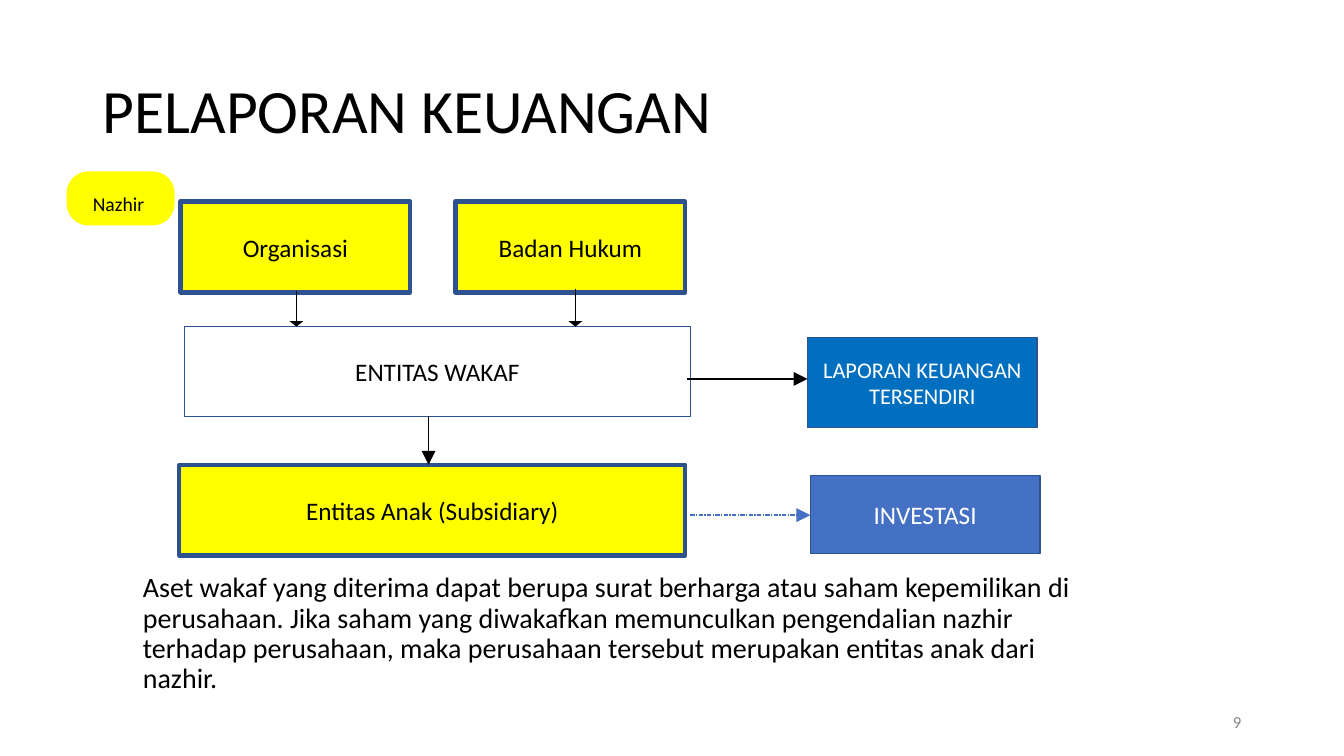
from pptx import Presentation
from pptx.dml.color import RGBColor
from pptx.enum.dml import MSO_LINE
from pptx.enum.shapes import MSO_CONNECTOR, MSO_SHAPE
from pptx.enum.text import MSO_ANCHOR, MSO_AUTO_SIZE, PP_ALIGN
from pptx.oxml.xmlchemy import OxmlElement
from pptx.util import Cm, Pt

BLACK, WHITE, YELLOW, NAVY, BLUE = "000000", "FFFFFF", "FFFF00", "2E528F", "4471C4"


def color(target, value):
    target.rgb = RGBColor.from_string(value)


def write(shape, text, size, value, align=PP_ALIGN.CENTER, anchor=MSO_ANCHOR.MIDDLE, inset=0):
    frame = shape.text_frame
    frame.text = text
    frame.word_wrap = True
    frame.auto_size = MSO_AUTO_SIZE.NONE
    frame.vertical_anchor = anchor
    frame.margin_left = frame.margin_right = Cm(inset)
    frame.margin_top = frame.margin_bottom = Cm(inset / 2)
    para = frame.paragraphs[0]
    para.alignment = align
    para.space_before = Pt(0)
    font = para.runs[0].font
    font.name = "Calibri"
    font.size = Pt(size)
    color(font.color, value)
    return para


deck = Presentation()
deck.slide_width, deck.slide_height = Cm(33.87), Cm(19.05)
page = deck.slides.add_slide(deck.slide_layouts[1])

title, body = page.placeholders
title.left, title.top, title.width, title.height = Cm(2.34), Cm(1.02), Cm(29.21), Cm(3.68)
para = write(title, "PELAPORAN KEUANGAN", 44, BLACK, PP_ALIGN.LEFT, inset=0.25)
para.line_spacing = 0.9

body.left, body.top, body.width, body.height = Cm(2.08), Cm(14.33), Cm(25.3), Cm(3.45)
explanation = (
    "Aset wakaf yang diterima dapat berupa surat berharga atau saham kepemilikan di "
    "perusahaan. Jika saham yang diwakafkan memunculkan pengendalian nazhir terhadap "
    "perusahaan, maka perusahaan tersebut merupakan entitas anak dari nazhir."
)
para = write(body, explanation, 20, BLACK, PP_ALIGN.LEFT, MSO_ANCHOR.TOP, 0.25)
para.line_spacing = 0.9
properties = para._p.get_or_add_pPr()
properties.set("marL", str(Cm(1.27)))
properties.set("indent", "0")
properties.append(OxmlElement("a:buNone"))

boxes = [
    ("Organisasi", 4.55, 5.08, 5.79, 2.29, YELLOW, 3, 18, BLACK),
    ("Badan Hukum", 11.48, 5.08, 5.79, 2.29, YELLOW, 3, 18, BLACK),
    ("ENTITAS WAKAF", 4.65, 8.23, 12.75, 2.26, None, 1, 18, BLACK),
    ("Entitas Anak (Subsidiary)", 4.52, 11.71, 12.75, 2.29, YELLOW, 3, 18, BLACK),
    ("LAPORAN KEUANGAN TERSENDIRI", 20.35, 8.51, 5.79, 2.26, "006FC0", 1, 16, WHITE),
    ("INVESTASI", 20.42, 11.99, 5.79, 1.96, BLUE, 1, 18, WHITE),
]
for text, left, top, width, height, fill, border, size, ink in boxes:
    box = page.shapes.add_shape(MSO_SHAPE.RECTANGLE, Cm(left), Cm(top), Cm(width), Cm(height))
    box.shadow.inherit = False
    if fill:
        box.fill.solid()
        color(box.fill.fore_color, fill)
    else:
        box.fill.background()
    color(box.line.color, NAVY)
    box.line.width = Pt(border)
    write(box, text, size, ink)

arrows = [
    (7.47, 7.34, 7.47, 8.23, BLACK, "sm"),
    (14.5, 7.29, 14.5, 8.23, BLACK, "sm"),
    (10.8, 10.49, 10.8, 11.71, BLACK, "lg"),
    (17.32, 9.55, 20.35, 9.55, BLACK, "lg"),
    (17.4, 12.98, 20.42, 12.98, BLUE, "lg"),
]
for start_x, start_y, end_x, end_y, ink, length in arrows:
    arrow = page.shapes.add_connector(
        MSO_CONNECTOR.STRAIGHT, Cm(start_x), Cm(start_y), Cm(end_x), Cm(end_y)
    )
    color(arrow.line.color, ink)
    arrow.line.width = Pt(1)
    if ink == BLUE:
        arrow.line.dash_style = MSO_LINE.DASH_DOT
        arrow.line._ln.prstDash.set("val", "sysDashDot")
    head = OxmlElement("a:tailEnd")
    head.set("type", "triangle")
    head.set("w", "lg")
    head.set("len", length)
    arrow.line._ln.append(head)
    arrow._element.spPr.append(OxmlElement("a:effectLst"))

badge = page.shapes.add_shape(MSO_SHAPE.ROUNDED_RECTANGLE, Cm(1.68), Cm(4.32), Cm(2.72), Cm(1.36))
badge.adjustments[0] = 0.4
badge.shadow.inherit = False
badge.fill.solid()
color(badge.fill.fore_color, YELLOW)
badge.line.fill.background()
write(badge, "Nazhir", 14, BLACK)
badge.text_frame.margin_top = Cm(0.25)
badge.text_frame.margin_right = Cm(0.1)

number = page.shapes.add_textbox(Cm(30.73), Cm(17.96), Cm(0.9), Cm(0.48))
write(number, "9", 12, "888888")

deck.save("out.pptx")
